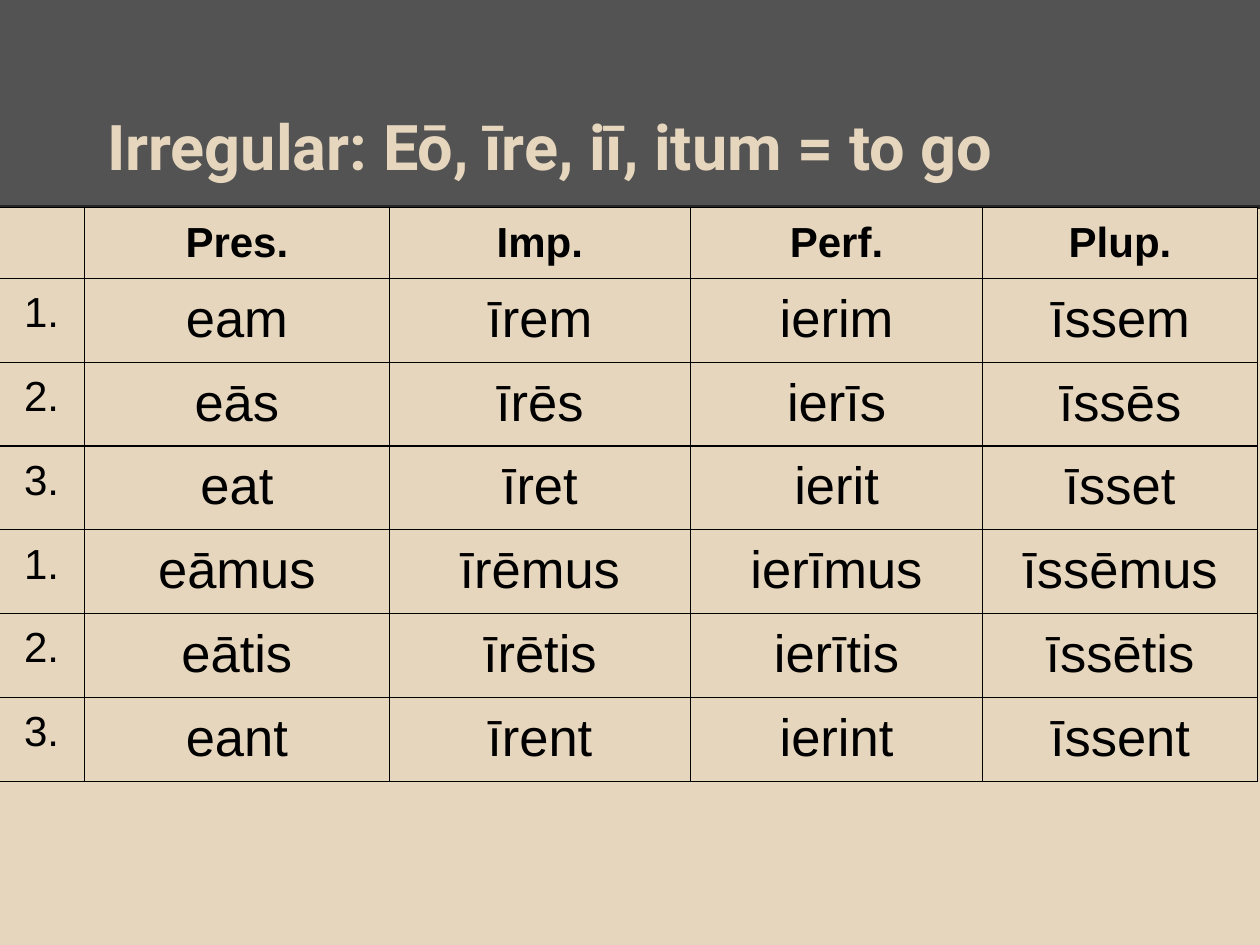
"""Build a slide with the subjunctive forms of the Latin verb for "to go"."""
from lxml import etree
from pptx import Presentation
from pptx.dml.color import RGBColor
from pptx.enum.shapes import MSO_CONNECTOR, MSO_SHAPE
from pptx.enum.text import MSO_ANCHOR, MSO_AUTO_SIZE, PP_ALIGN
from pptx.oxml.ns import qn
from pptx.util import Inches, Pt

RECTANGLE = MSO_SHAPE.RECTANGLE
STRAIGHT = MSO_CONNECTOR.STRAIGHT
BOTTOM, TOP = MSO_ANCHOR.BOTTOM, MSO_ANCHOR.TOP
LEFT, CENTER = PP_ALIGN.LEFT, PP_ALIGN.CENTER
NO_FIT = MSO_AUTO_SIZE.NONE

COLORS = {"sand": "E6D6BD", "band": "535353", "rule": "262626", "ink": "000000"}
HEADINGS = ["", "Pres.", "Imp.", "Perf.", "Plup."]
FORMS = [
    ["1.", "eam", "īrem", "ierim", "īssem"],
    ["2.", "eās", "īrēs", "ierīs", "īssēs"],
    ["3.", "eat", "īret", "ierit", "īsset"],
    ["1.", "eāmus", "īrēmus", "ierīmus", "īssēmus"],
    ["2.", "eātis", "īrētis", "ierītis", "īssētis"],
    ["3.", "eant", "īrent", "ierint", "īssent"],
]
COLUMN_WIDTHS = [0.68, 2.42, 2.39, 2.32, 2.18]
ROW_HEIGHTS = [0.56] + [3.99 / len(FORMS)] * len(FORMS)
BAND_HEIGHT = Inches(1.64)


def color(name):
    return RGBColor.from_string(COLORS[name])


def write(para, text, align, font_name, size, ink, bold):
    para.alignment = align
    span = para.add_run()
    span.text = text
    for key, value in {"name": font_name, "size": Pt(size), "bold": bold}.items():
        setattr(span.font, key, value)
    span.font.color.rgb = color(ink)


deck = Presentation()
deck.slide_width, deck.slide_height = Inches(10), Inches(7.5)
page = deck.slides.add_slide(deck.slide_layouts[5])
page.background.fill.solid()
page.background.fill.fore_color.rgb = color("sand")

band = page.shapes.add_shape(RECTANGLE, 0, 0, deck.slide_width, BAND_HEIGHT)
band.shadow.inherit = False
band.fill.solid()
band.fill.fore_color.rgb = color("band")
band.line.fill.background()

rule = page.shapes.add_connector(STRAIGHT, 0, BAND_HEIGHT, deck.slide_width, BAND_HEIGHT)
rule.line.color.rgb = color("rule")
rule.line.width = Pt(2.25)
etree.SubElement(rule.element.spPr, qn("a:effectLst"))

title = page.shapes.title
for shape in (band, rule):
    title.element.addprevious(shape.element)
title_place = {"left": 0.5, "top": 0.3, "width": 9, "height": 1.25}
for key, value in title_place.items():
    setattr(title, key, Inches(value))
title_format = {"word_wrap": True, "auto_size": NO_FIT, "vertical_anchor": BOTTOM}
title_format |= {f"margin_{side}": Inches(0.1) for side in ("left", "right", "top", "bottom")}
for key, value in title_format.items():
    setattr(title.text_frame, key, value)
title_para = title.text_frame.paragraphs[0]
write(title_para, "Irregular: Eō, īre, iī, itum = to go", LEFT, "Roboto", 36, "sand", True)
title_properties = title_para._p.get_or_add_pPr()
title_properties.set("marL", "0")
title_properties.set("indent", str(Inches(0.25)))

rows = [HEADINGS] + FORMS
frame = page.shapes.add_table(
    len(rows), len(HEADINGS), Inches(-0.01), Inches(1.65),
    Inches(sum(COLUMN_WIDTHS)), Inches(sum(ROW_HEIGHTS)),
)
table = frame.table
table.first_row = table.horz_banding = False
for column, width in zip(table.columns, COLUMN_WIDTHS):
    column.width = Inches(width)
for row, height in zip(table.rows, ROW_HEIGHTS):
    row.height = Inches(height)

cell_format = {
    "margin_left": Inches(0.1), "margin_right": Inches(0.1),
    "margin_top": Inches(0.09), "margin_bottom": Inches(0.09),
    "vertical_anchor": TOP,
}
for row_index, texts in enumerate(rows):
    for column_index, text in enumerate(texts):
        cell = table.cell(row_index, column_index)
        for key, value in cell_format.items():
            setattr(cell, key, value)
        properties = cell._tc.get_or_add_tcPr()
        for side in ("lnL", "lnR", "lnT", "lnB"):
            border = etree.SubElement(properties, qn(f"a:{side}"), w=str(Pt(0.75)))
            paint = etree.SubElement(border, qn("a:solidFill"))
            etree.SubElement(paint, qn("a:srgbClr"), val=COLORS["ink"])
        cell.fill.solid()
        cell.fill.fore_color.rgb = color("sand")
        if text:
            is_heading = row_index == 0
            size = 24 if is_heading or column_index == 0 else 30
            write(cell.text_frame.paragraphs[0], text, CENTER, "Arial", size, "ink", is_heading)

deck.save("out.pptx")
